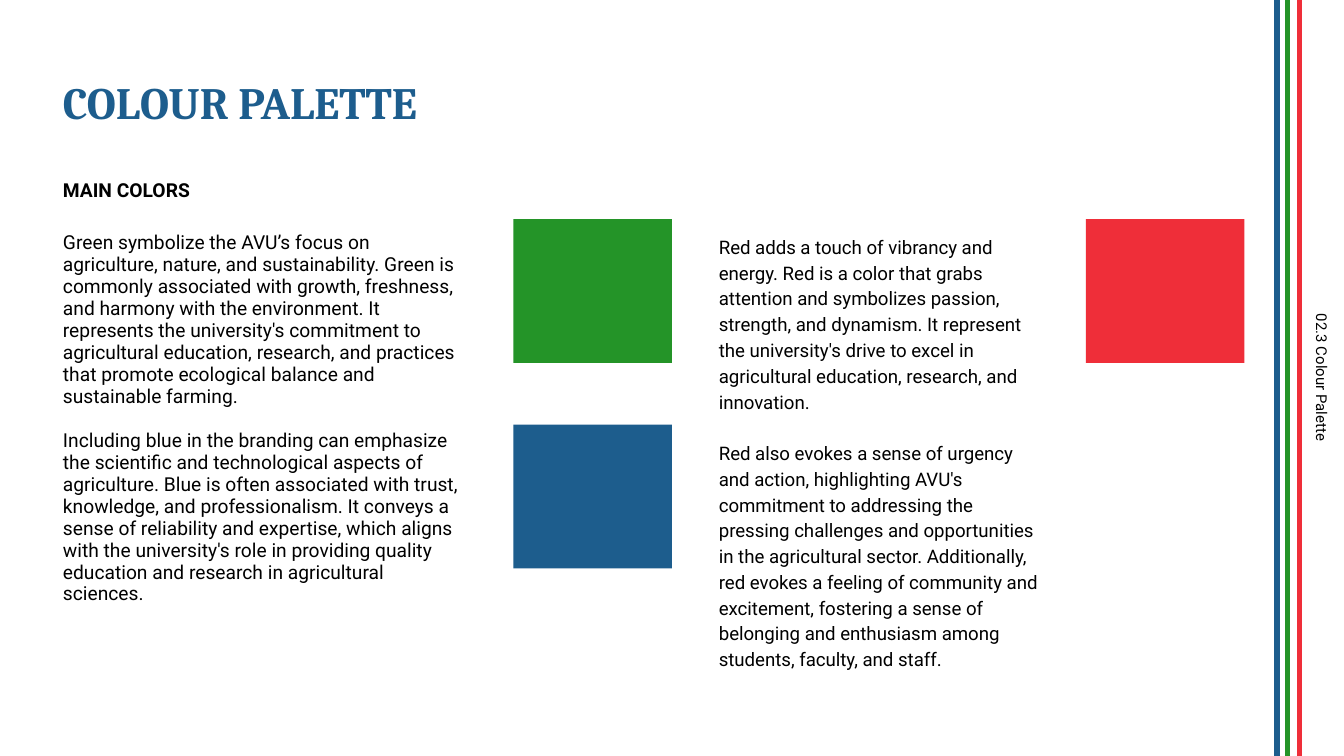
from lxml import etree
from pptx import Presentation
from pptx.dml.color import RGBColor
from pptx.enum.shapes import MSO_CONNECTOR, MSO_SHAPE
from pptx.enum.text import MSO_ANCHOR, MSO_AUTO_SIZE, PP_ALIGN
from pptx.oxml.ns import qn
from pptx.util import Inches, Pt

LINE = MSO_CONNECTOR.STRAIGHT
RECT = MSO_SHAPE.RECTANGLE
TOP = MSO_ANCHOR.TOP
GROW = MSO_AUTO_SIZE.SHAPE_TO_FIT_TEXT
FIXED = MSO_AUTO_SIZE.NONE
LEFT, CENTER, JUSTIFY = PP_ALIGN.LEFT, PP_ALIGN.CENTER, PP_ALIGN.JUSTIFY

COLORS = {
    "black": "000000",
    "blue": "1D5D8D",
    "green": "249428",
    "red": "EF2E39",
}

COOL = [
    "Green symbolize the AVU’s focus on agriculture, nature, and "
    "sustainability. Green is commonly associated with growth, freshness, "
    "and harmony with the environment. It represents the university's "
    "commitment to agricultural education, research, and practices that "
    "promote ecological balance and sustainable farming.",
    "Including blue in the branding can emphasize the scientific and "
    "technological aspects of agriculture. Blue is often associated with "
    "trust, knowledge, and professionalism. It conveys a sense of "
    "reliability and expertise, which aligns with the university's role in "
    "providing quality education and research in agricultural sciences.",
]
WARM = [
    "Red adds a touch of vibrancy and energy. Red is a color that grabs "
    "attention and symbolizes passion, strength, and dynamism. It represent "
    "the university's drive to excel in agricultural education, research, "
    "and innovation.",
    "Red also evokes a sense of urgency and action, highlighting AVU's "
    "commitment to addressing the pressing challenges and opportunities in "
    "the agricultural sector. Additionally, red evokes a feeling of "
    "community and excitement, fostering a sense of belonging and "
    "enthusiasm among students, faculty, and staff.",
]


def rgb(name):
    return RGBColor.from_string(COLORS[name])


def add_text(slide, spot, lines, size, space, font="Roboto", color="black",
             bold=False, align=LEFT, gap=0, after=0, fit=FIXED):
    box = slide.shapes.add_textbox(*map(Inches, spot))
    frame = box.text_frame
    frame.word_wrap = True
    frame.auto_size = fit
    frame.vertical_anchor = TOP
    frame.margin_left = frame.margin_right = Inches(0.1)
    frame.margin_top = frame.margin_bottom = Inches(0.1)
    frame.text = "\n".join(lines)
    for row, para in enumerate(frame.paragraphs):
        para.alignment = align
        para.line_spacing = space
        para.space_before = Pt(gap if row else 0)
        para.space_after = Pt(after)
        for run in para.runs:
            run.font.name = font
            run.font.size = Pt(size)
            run.font.bold = bold
            run.font.color.rgb = rgb(color)
    return box


def add_swatch(slide, left, top, color):
    block = slide.shapes.add_shape(
        RECT, Inches(left), Inches(top), Inches(1.18), Inches(1.07))
    block.shadow.inherit = False
    block.fill.solid()
    block.fill.fore_color.rgb = rgb(color)
    block.line.fill.background()


def add_stripe(slide, left, color):
    stripe = slide.shapes.add_connector(
        LINE, Inches(left), Inches(-0.22), Inches(left), Inches(5.78))
    stripe.line.color.rgb = rgb(color)
    stripe.line.width = Pt(3)
    props = stripe.element.find(qn("p:spPr"))
    etree.SubElement(props, qn("a:effectLst"))


def main():
    deck = Presentation()
    deck.slide_width = Inches(10)
    deck.slide_height = Inches(10) * 9 // 16
    slide = deck.slides.add_slide(deck.slide_layouts[6])

    add_text(slide, (0.37, 0.6, 4.57, 0.56), ["COLOUR PALETTE"], 24, 0.6,
             font="Cambria", color="blue", bold=True, after=12)
    add_text(slide, (0.37, 1.63, 3.18, 3.17), COOL, 10.3, 0.95, gap=12)
    add_text(slide, (5.25, 1.63, 2.59, 3.66), WARM, 10, 1.15, gap=13.8,
             fit=GROW)

    for left, top, color in ((3.82, 1.63, "green"), (3.82, 3.16, "blue"),
                             (8.08, 1.63, "red")):
        add_swatch(slide, left, top, color)
    for left, color in ((9.5, "blue"), (9.58, "green"), (9.67, "red")):
        add_stripe(slide, left, color)

    side = add_text(slide, (7.71, 2.64, 4.24, 0.34), ["02.3 Colour Palette"],
                    8, 1.15, align=CENTER, after=4, fit=GROW)
    side.rotation = 90
    add_text(slide, (0.37, 1.26, 3.28, 0.37), ["MAIN COLORS"], 10.3, 0.95,
             bold=True, align=JUSTIFY, after=12, fit=GROW)
    deck.save("out.pptx")


if __name__ == "__main__":
    main()
